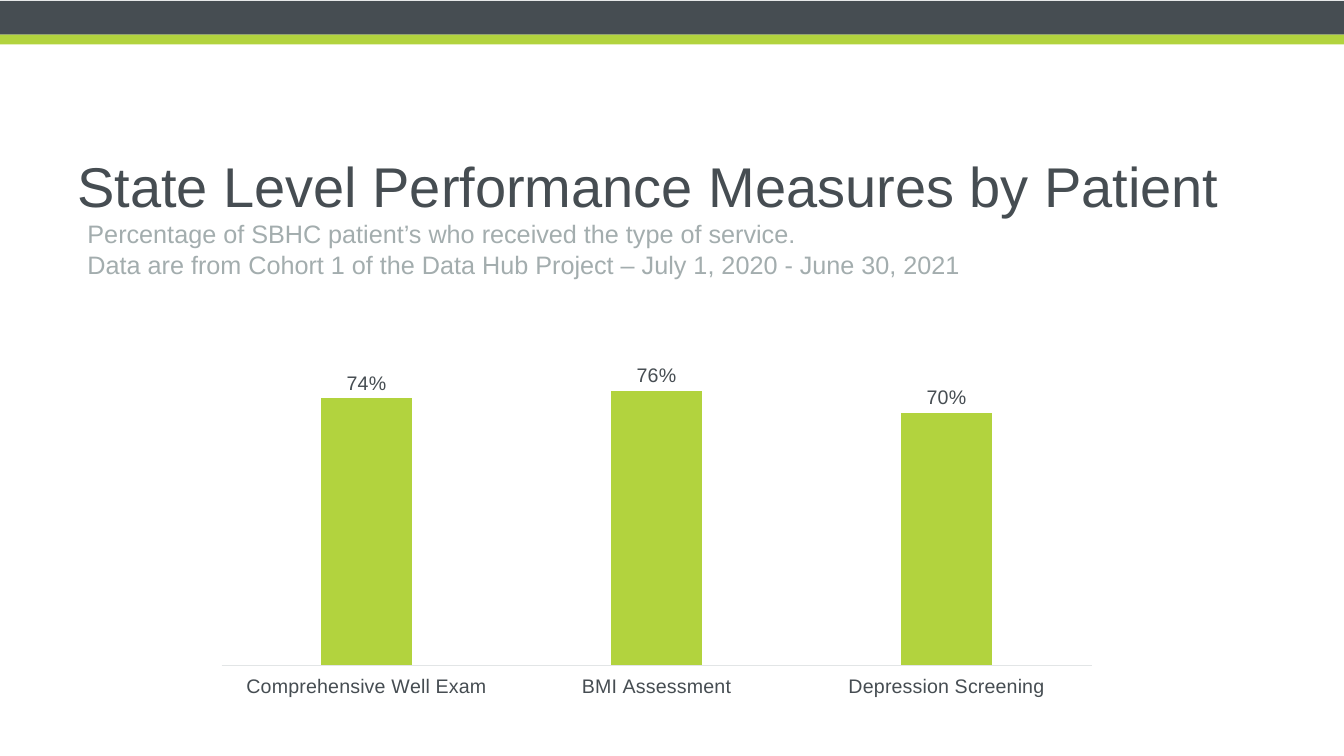
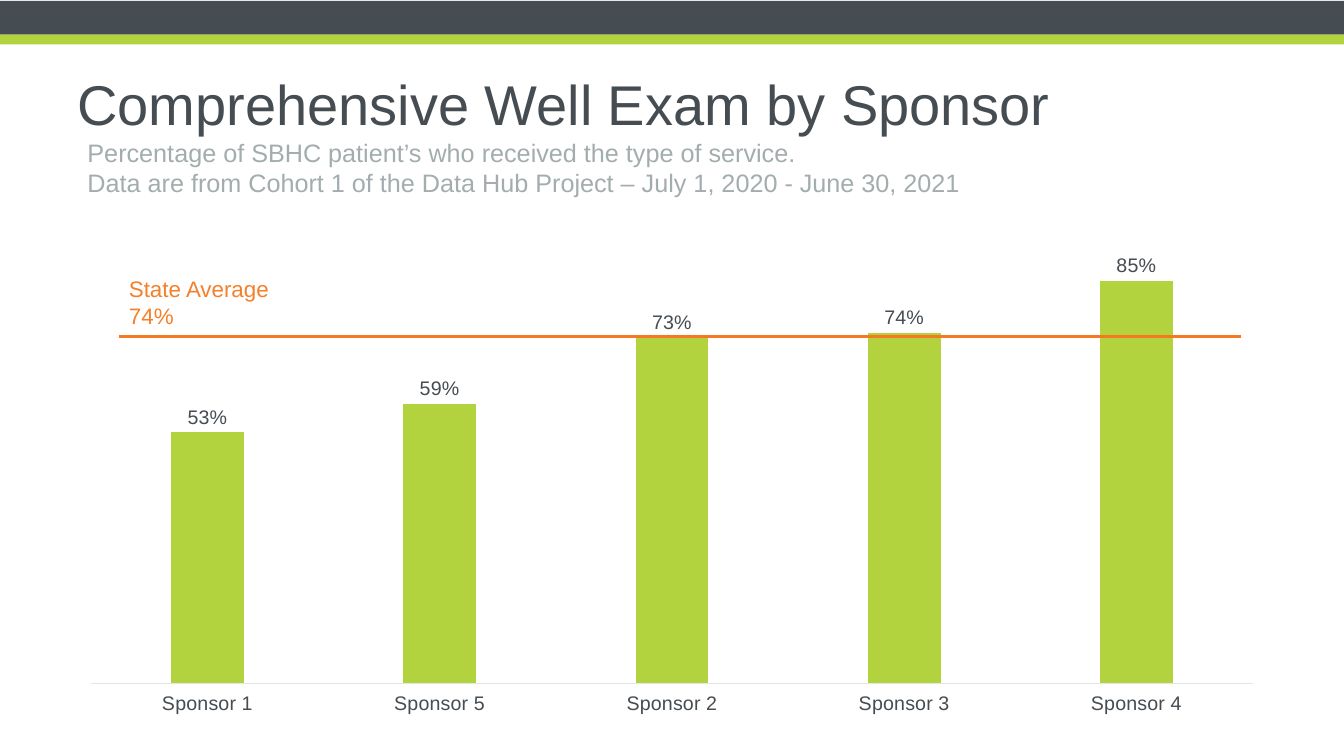
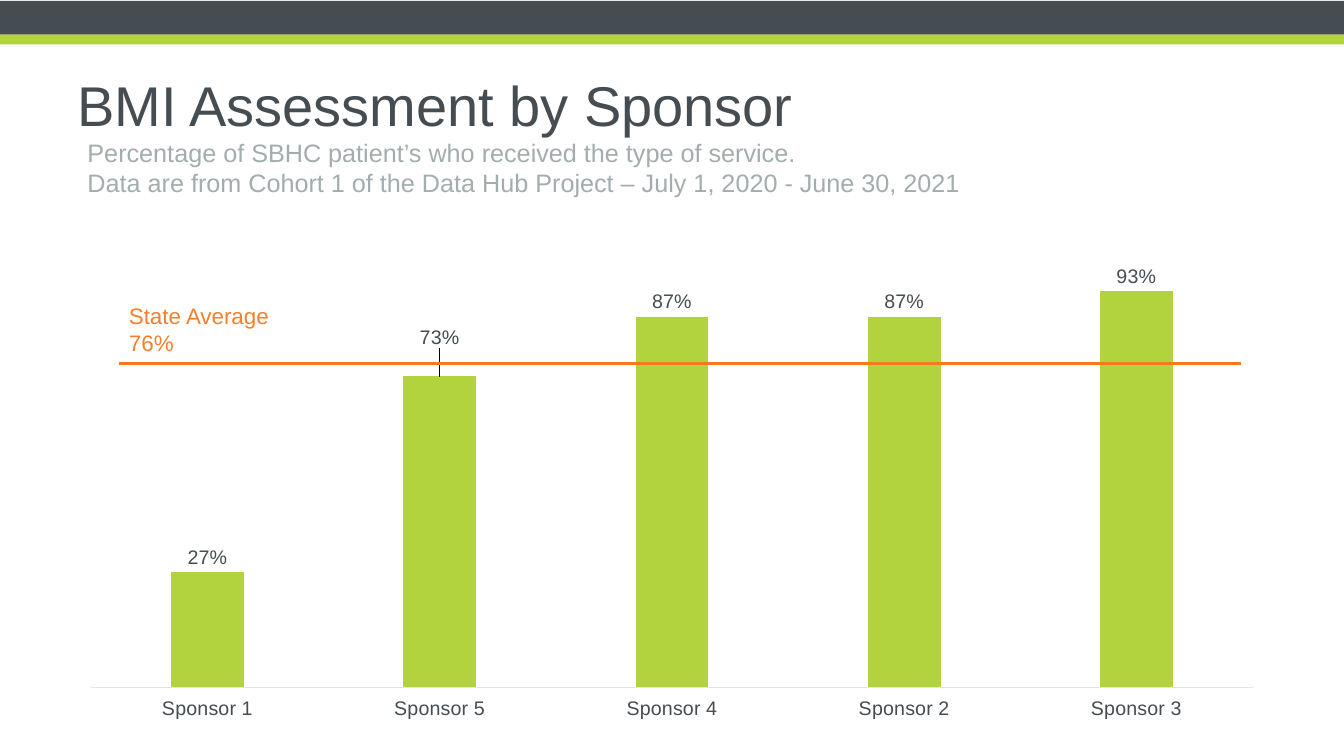
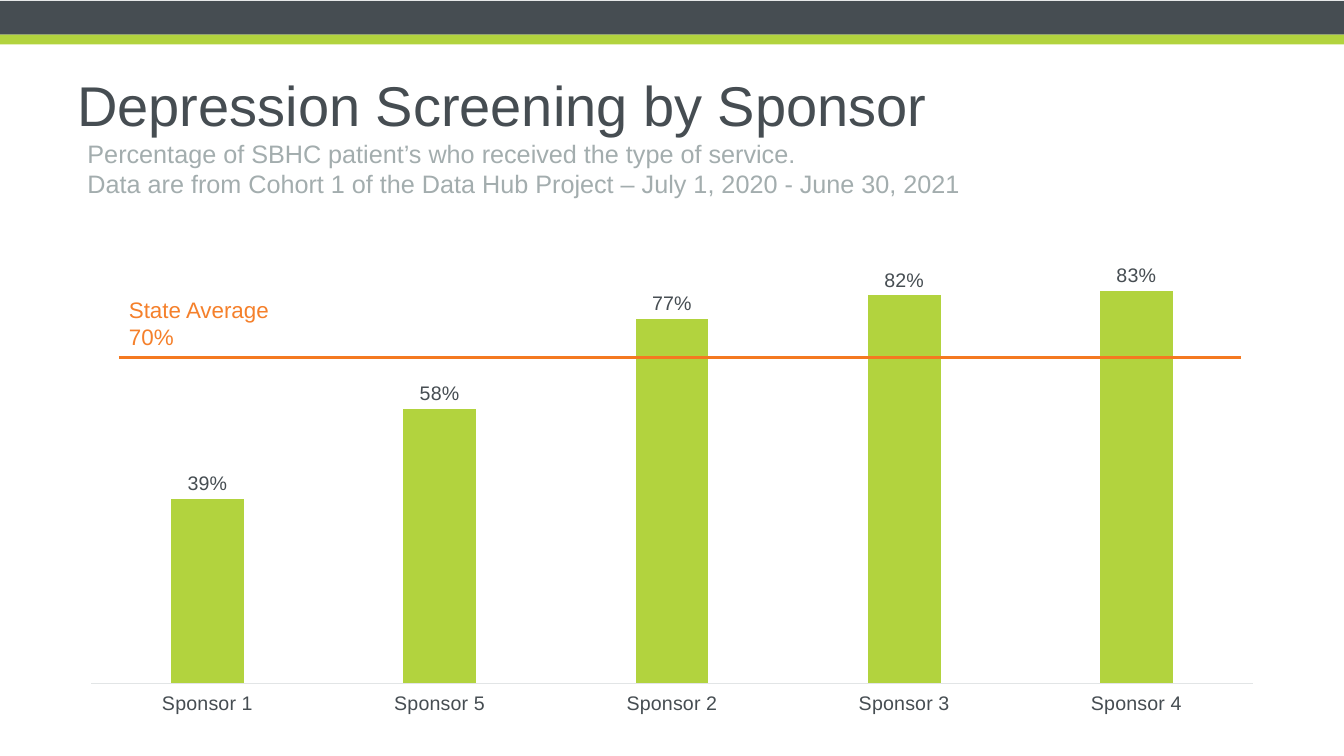
from lxml import etree
from pptx import Presentation
from pptx.chart.data import CategoryChartData
from pptx.dml.color import RGBColor
from pptx.enum.chart import XL_CHART_TYPE, XL_LABEL_POSITION, XL_TICK_LABEL_POSITION, XL_TICK_MARK
from pptx.enum.shapes import MSO_CONNECTOR, MSO_SHAPE
from pptx.enum.text import MSO_ANCHOR, PP_ALIGN
from pptx.oxml import parse_xml
from pptx.oxml.ns import nsdecls, qn
from pptx.util import Pt

COLUMNS = XL_CHART_TYPE.COLUMN_CLUSTERED
OUTSIDE_END = XL_LABEL_POSITION.OUTSIDE_END
LOW = XL_TICK_LABEL_POSITION.LOW
NO_TICK = XL_TICK_MARK.NONE
RECTANGLE = MSO_SHAPE.RECTANGLE
STRAIGHT = MSO_CONNECTOR.STRAIGHT
TOP, MIDDLE = MSO_ANCHOR.TOP, MSO_ANCHOR.MIDDLE
LEFT = PP_ALIGN.LEFT

FONT = "Arial"
SLATE, GREEN, GRAY = "464D52", "B2D33E", "A3ADAE"
AXIS_GRAY, LINE_ORANGE, TEXT_ORANGE = "E2E5E6", "F47920", "F5802B"

WIDTH, HEIGHT = 960, 540
BANDS = [(0.7, 24.1, SLATE), (24.8, 7, GREEN)]  # top, height, colour
TITLE_LEFT, TITLE_WIDTH, TITLE_HEIGHT = 48, 864, 84.2
SUBTITLE_DROP = 62.6
AVERAGE_LEFT, AVERAGE_RIGHT = 85, 886.3
AVERAGE_LABEL_RISE = 47.2

SUBTITLE = [
    "Percentage of SBHC patient’s who received the type of service.",
    "Data are from Cohort 1 of the Data Hub Project – July 1, 2020 - June 30, 2021",
]

SLIDES = [
    {
        "title": "State Level Performance Measures by Patient",
        "title_top": 90,
        "chart_box": (145.4, 211.7, 647.3, 292.3),
        "axis_max": 1,
        "rates": {"Comprehensive Well Exam": 0.74, "BMI Assessment": 0.76,
                  "Depression Screening": 0.7},
    },
    {
        "title": "Comprehensive Well Exam by Sponsor",
        "title_top": 31.8,
        "chart_box": (48, 177.1, 864, 340.6),
        "axis_max": 0.9,
        "rates": {"Sponsor 1": 0.53, "Sponsor 5": 0.59, "Sponsor 2": 0.73,
                  "Sponsor 3": 0.74, "Sponsor 4": 0.85},
        "average": ("State Average 74%", 240.4),
    },
    {
        "title": "BMI Assessment by Sponsor",
        "title_top": 32,
        "chart_box": (48, 180, 864, 340.6),
        "axis_max": 1,
        "rates": {"Sponsor 1": 0.27, "Sponsor 5": 0.73, "Sponsor 4": 0.87,
                  "Sponsor 2": 0.87, "Sponsor 3": 0.93},
        "average": ("State Average 76%", 259.5),
        "raised_label": (1, -0.05),
    },
    {
        "title": "Depression Screening by Sponsor",
        "title_top": 32.6,
        "chart_box": (48, 177.1, 864, 340.6),
        "axis_max": 0.9,
        "rates": {"Sponsor 1": 0.39, "Sponsor 5": 0.58, "Sponsor 2": 0.77,
                  "Sponsor 3": 0.82, "Sponsor 4": 0.83},
        "average": ("State Average 70%", 255.4),
    },
]


def rgb(color):
    return RGBColor.from_string(color)


def points(*lengths):
    return [Pt(length) for length in lengths]


def style_font(font, size, color):
    font.name, font.size = FONT, Pt(size)
    font.color.rgb = rgb(color)


def write(shape, lines, size=18, color=SLATE, anchor=TOP):
    frame = shape.text_frame
    frame.word_wrap = True
    frame.vertical_anchor = anchor
    frame.text = "\n".join(lines)
    for paragraph in frame.paragraphs:
        paragraph.alignment = LEFT
        for run in paragraph.runs:
            style_font(run.font, size, color)


def add_master_bands(prs, slide):
    """Draw the bands on a slide, then move them behind everything on the master."""
    tree = prs.slide_master.shapes._spTree
    for i, (top, height, color) in enumerate(BANDS):
        band = slide.shapes.add_shape(RECTANGLE, *points(0, top, WIDTH, height))
        band.shadow.inherit = False
        band.fill.solid()
        band.fill.fore_color.rgb = rgb(color)
        band.line.fill.background()
        band._element.nvSpPr.cNvPr.set("id", str(100 + i))
        tree.insert(2 + i, band._element)


def raise_label(series, index, shift):
    """Move one data label by a share of the chart height."""
    label = series.points[index].data_label
    style_font(label.font, 14, SLATE)
    label.position = OUTSIDE_END
    idx = series._element.find(".//" + qn("c:dLbl")).find(qn("c:idx"))
    idx.addnext(parse_xml(
        f'<c:layout {nsdecls("c")}><c:manualLayout><c:x val="0"/>'
        f'<c:y val="{shift}"/></c:manualLayout></c:layout>'))


def add_rate_chart(slide, box, rates, axis_max, raised_label=None):
    data = CategoryChartData(number_format="0%")
    data.categories = list(rates)
    data.add_series("Series 1", list(rates.values()))
    chart = slide.shapes.add_chart(COLUMNS, *points(*box), data).chart
    chart.has_title = chart.has_legend = False
    style_font(chart.font, 14, SLATE)

    categories = chart.category_axis
    categories.major_tick_mark = categories.minor_tick_mark = NO_TICK
    categories.tick_label_position = LOW
    categories.has_major_gridlines = False
    categories.format.line.color.rgb = rgb(AXIS_GRAY)
    categories.format.line.width = Pt(0.75)
    style_font(categories.tick_labels.font, 14, SLATE)

    values = chart.value_axis
    values.visible = values.has_major_gridlines = False
    values.minimum_scale, values.maximum_scale = 0, axis_max

    plot = chart.plots[0]
    plot.gap_width, plot.overlap = 219, -27
    plot.vary_by_categories = False
    series = plot.series[0]
    series.format.fill.solid()
    series.format.fill.fore_color.rgb = rgb(GREEN)
    labels = series.data_labels
    labels.show_value = True
    labels.number_format, labels.number_format_is_linked = "0%", False
    labels.position = OUTSIDE_END
    style_font(labels.font, 14, SLATE)
    if raised_label:
        raise_label(series, *raised_label)


def add_average(slide, text, y):
    group = slide.shapes.add_group_shape()
    line = group.shapes.add_connector(
        STRAIGHT, *points(AVERAGE_LEFT, y, AVERAGE_RIGHT, y))
    line.line.color.rgb = rgb(LINE_ORANGE)
    line.line.width = Pt(2.25)
    etree.SubElement(line._element.spPr, qn("a:effectLst"))
    label = group.shapes.add_textbox(
        *points(AVERAGE_LEFT, y - AVERAGE_LABEL_RISE, 120, 46))
    write(label, [text], size=16, color=TEXT_ORANGE)


def build_slide(slide, content):
    top = content["title_top"]
    title = slide.shapes.title
    title.left, title.top, title.width, title.height = points(
        TITLE_LEFT, top, TITLE_WIDTH, TITLE_HEIGHT)
    write(title, [content["title"]], size=40, anchor=MIDDLE)
    add_rate_chart(slide, content["chart_box"], content["rates"],
                   content["axis_max"], content.get("raised_label"))
    if "average" in content:
        add_average(slide, *content["average"])
    subtitle = slide.shapes.add_textbox(*points(55.4, top + SUBTITLE_DROP, 827.3, 51))
    write(subtitle, SUBTITLE, color=GRAY)


def main():
    prs = Presentation()
    prs.slide_width, prs.slide_height = points(WIDTH, HEIGHT)
    title_only = prs.slide_layouts.get_by_name("Title Only")
    for i, content in enumerate(SLIDES):
        slide = prs.slides.add_slide(title_only)
        if i == 0:
            add_master_bands(prs, slide)
        build_slide(slide, content)
    prs.save("out.pptx")


if __name__ == "__main__":
    main()
